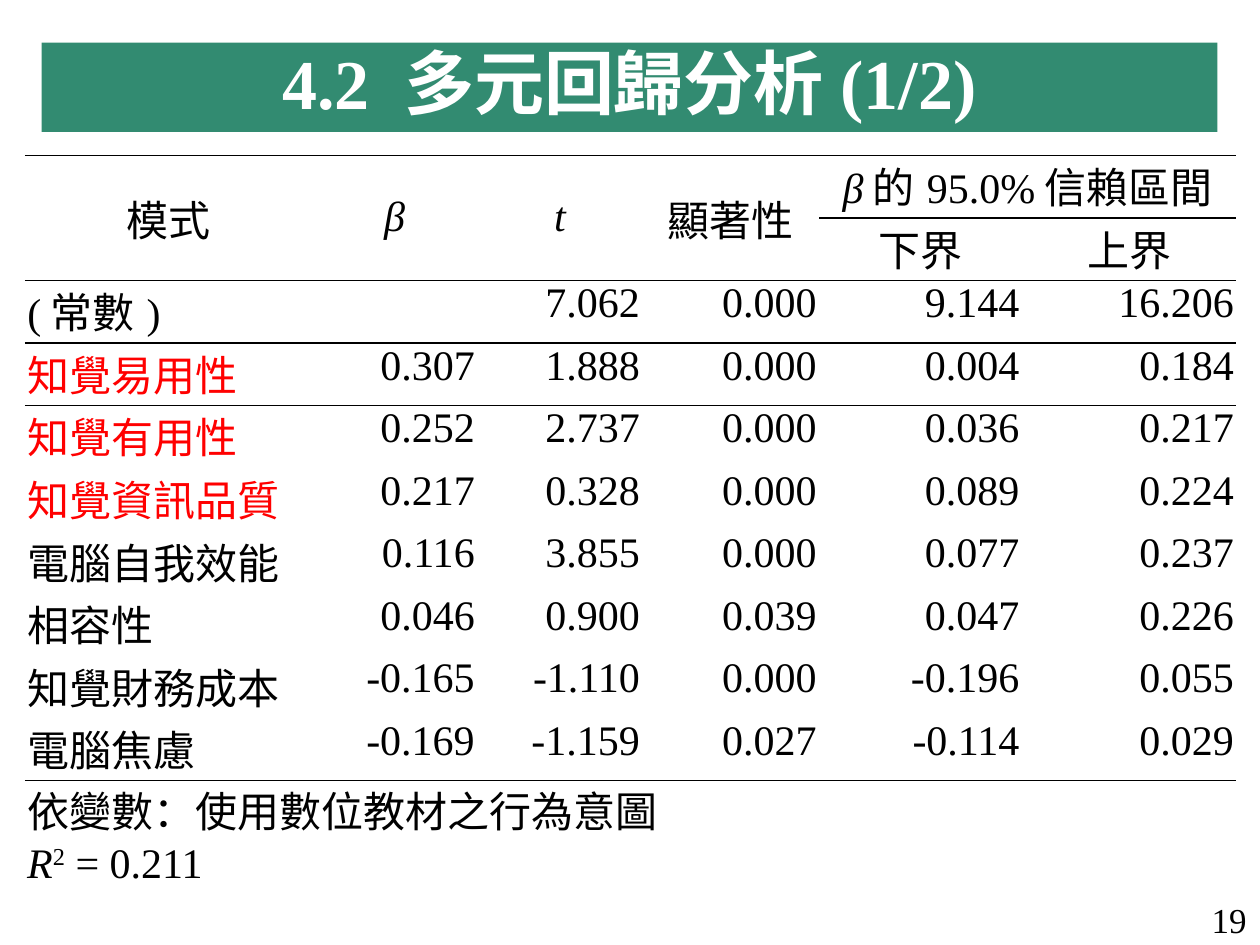
from lxml.etree import SubElement
from pptx import Presentation
from pptx.dml.color import RGBColor as RGB
from pptx.enum.text import MSO_ANCHOR as ANCHOR, MSO_AUTO_SIZE as AUTO, PP_ALIGN as ALIGN
from pptx.oxml import parse_xml
from pptx.oxml.ns import nsdecls, qn
from pptx.util import Cm, Pt

THEME = {
    "latin": "Times New Roman", "cjk": "Noto Sans CJK SC",
    "ink": "000000", "key": "FF0000", "band": "328B71", "light": "FFFFFF",
    "title": 40, "body": 24, "number": 20, "rule": 1,
    "plain_table": "{2D5ABB26-0587-4C30-8999-92F81FD0307C}",
}

TITLE = [("4.2 ", {}), ("多元回歸分析", {"latin": THEME["cjk"]}), ("(1/2)", {})]
HEADERS = [
    (0, 0, [("模式", {})]),
    (0, 1, [("β", {"italic": True})]),
    (0, 2, [("t", {"italic": True})]),
    (0, 3, [("顯著性", {})]),
    (0, 4, [("β", {"italic": True}), ("的95.0%信賴區間", {})]),
    (1, 4, [("下界", {})]),
    (1, 5, [("上界", {})]),
]
RESULTS = [
    ("(常數)", "", "7.062", "0.000", "9.144", "16.206"),
    ("知覺易用性", "0.307", "1.888", "0.000", "0.004", "0.184"),
    ("知覺有用性", "0.252", "2.737", "0.000", "0.036", "0.217"),
    ("知覺資訊品質", "0.217", "0.328", "0.000", "0.089", "0.224"),
    ("電腦自我效能", "0.116", "3.855", "0.000", "0.077", "0.237"),
    ("相容性", "0.046", "0.900", "0.039", "0.047", "0.226"),
    ("知覺財務成本", "-0.165", "-1.110", "0.000", "-0.196", "0.055"),
    ("電腦焦慮", "-0.169", "-1.159", "0.027", "-0.114", "0.029"),
]
KEY_FACTORS = {"知覺易用性", "知覺有用性", "知覺資訊品質"}
NOTES = [
    [("依變數：使用數位教材之行為意圖", {})],
    [("R", {"italic": True}), ("2", {"raised": True}), (" = 0.211", {})],
]
PAGE = "19"

COLUMNS = [5.79, 3.33, 3.33, 3.56, 4.09, 4.32]
ROW_HEIGHT = 1.26
HEADER_ROWS = 2
ROWS = HEADER_ROWS + len(RESULTS)
RULES = {0, 1, HEADER_ROWS, HEADER_ROWS + 1, ROWS}


def add_runs(p, runs, size="body", color="ink", bold=None, align=ALIGN.LEFT):
    p.alignment = align
    for text, style in runs:
        r = p.add_run()
        r.text = text
        font = r.font
        font.name = style.get("latin", THEME["latin"])
        font.size = Pt(THEME[size])
        font.bold = bold
        font.italic = style.get("italic")
        font.color.rgb = RGB.from_string(THEME[color])
        rPr = r._r.get_or_add_rPr()
        SubElement(rPr, qn("a:ea")).set("typeface", THEME["cjk"])
        if style.get("raised"):
            rPr.set("baseline", "30000")


def add_text(s, box, paragraphs, anchor=ANCHOR.TOP, **style):
    tf = s.shapes.add_textbox(*map(Cm, box)).text_frame
    tf.word_wrap = True
    tf.vertical_anchor = anchor
    for i, runs in enumerate(paragraphs):
        add_runs(tf.add_paragraph() if i else tf.paragraphs[0], runs, **style)


def fill_cell(cell, runs, **style):
    cell.margin_left = cell.margin_right = Cm(0.05)
    cell.margin_top = cell.margin_bottom = 0
    add_runs(cell.text_frame.paragraphs[0], runs, **style)


def rule_cell(cell, row):
    cell.fill.background()
    tcPr = cell._tc.get_or_add_tcPr()
    sides = [side for side, edge in (("lnT", row), ("lnB", row + 1)) if edge in RULES]
    for i, side in enumerate(sides):
        tcPr.insert(i, parse_xml(
            f'<a:{side} {nsdecls("a")} w="{Pt(THEME["rule"])}"><a:solidFill>'
            f'<a:srgbClr val="{THEME["ink"]}"/></a:solidFill></a:{side}>'))


def add_results(s):
    frame = s.shapes.add_table(ROWS, len(COLUMNS), Cm(0.5), Cm(3.13),
                               Cm(sum(COLUMNS)), Cm(ROW_HEIGHT * ROWS))
    table = frame.table
    table.first_row = table.horz_banding = False
    table._tbl.tblPr.find(qn("a:tableStyleId")).text = THEME["plain_table"]
    for column, width in zip(table.columns, COLUMNS):
        column.width = Cm(width)
    for i, row in enumerate(table.rows):
        row.height = Cm(ROW_HEIGHT)
        for cell in row.cells:
            rule_cell(cell, i)
    for col in range(4):
        table.cell(0, col).merge(table.cell(1, col))
        table.cell(0, col).vertical_anchor = ANCHOR.MIDDLE
    table.cell(0, 4).merge(table.cell(0, 5))
    for row, col, runs in HEADERS:
        fill_cell(table.cell(row, col), runs, align=ALIGN.CENTER)
    for i, (factor, *values) in enumerate(RESULTS, HEADER_ROWS):
        fill_cell(table.cell(i, 0), [(factor, {})],
                  color="key" if factor in KEY_FACTORS else "ink")
        for j, value in enumerate(values, 1):
            if value:
                fill_cell(table.cell(i, j), [(value, {})], align=ALIGN.RIGHT)


def add_title(s):
    sp = s.shapes.title
    sp.left, sp.top, sp.width, sp.height = map(Cm, (0.84, 0.86, 23.7, 1.8))
    sp.fill.solid()
    sp.fill.fore_color.rgb = RGB.from_string(THEME["band"])
    tf = sp.text_frame
    tf.auto_size = AUTO.NONE
    tf.vertical_anchor = ANCHOR.MIDDLE
    tf.margin_top = tf.margin_bottom = 0
    p = tf.paragraphs[0]
    p.line_spacing = 0.9
    add_runs(p, TITLE, size="title", color="light", bold=True, align=ALIGN.CENTER)


def main():
    prs = Presentation()
    prs.slide_width, prs.slide_height = Cm(25.4), Cm(19.05)
    s = prs.slides.add_slide(prs.slide_layouts[5])
    add_title(s)
    add_text(s, (0.3, 15.72, 19.6, 2.13), NOTES)
    add_text(s, (19.66, 18.03, 5.72, 1.02), [[(PAGE, {})]],
             anchor=ANCHOR.MIDDLE, size="number", align=ALIGN.RIGHT)
    add_results(s)
    prs.save("out.pptx")


if __name__ == "__main__":
    main()
